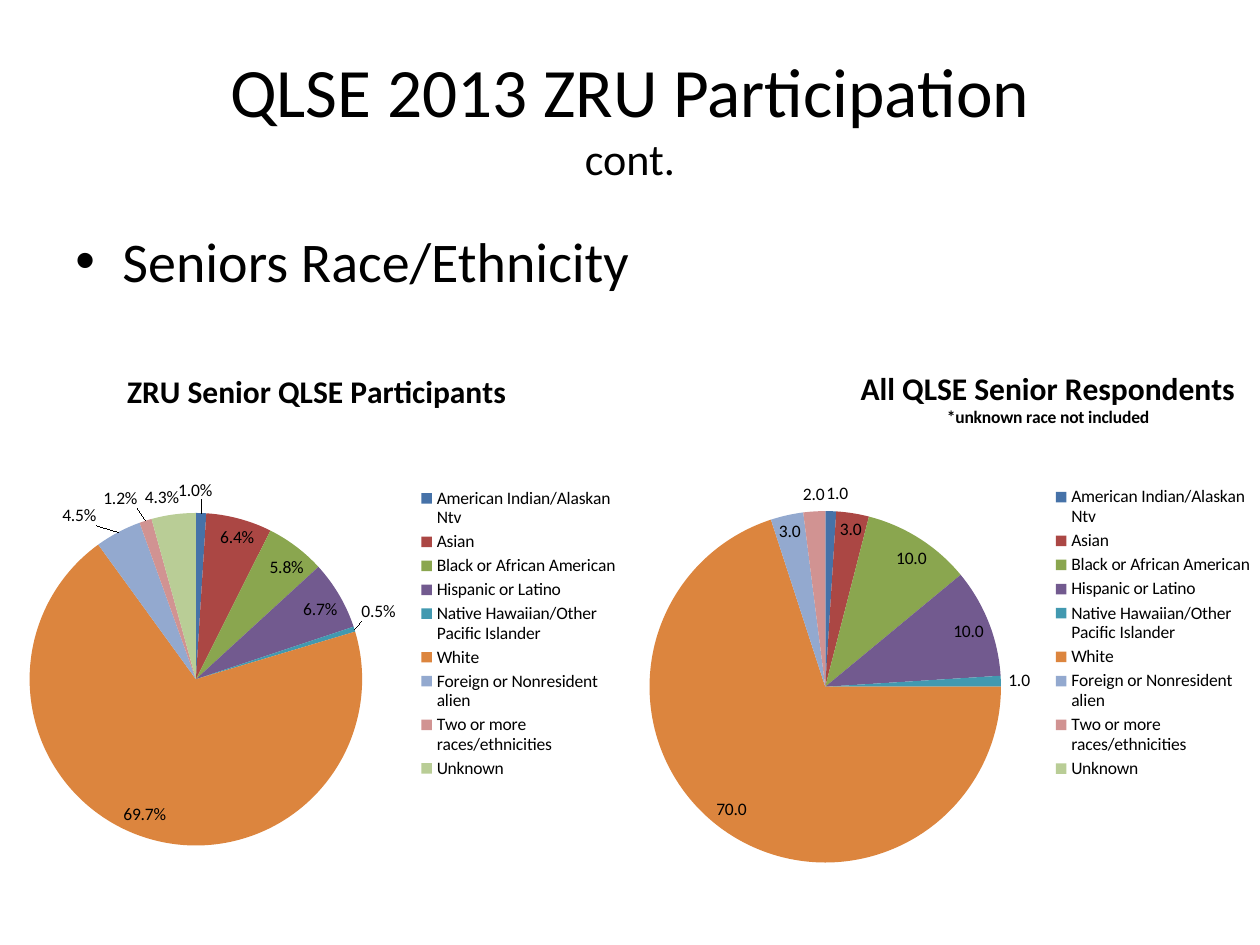
import pptx
import pptx.chart.data
import pptx.dml.color
import pptx.enum.chart
import pptx.enum.text
import pptx.oxml
import pptx.oxml.ns
import pptx.util
from pptx.util import Cm


def color(value):
    return pptx.dml.color.RGBColor.from_string(value)


def place(chart, anchor, values, inner=False):
    for layout in anchor.getparent().findall(pptx.oxml.ns.qn("c:layout")):
        anchor.getparent().remove(layout)
    target = '<c:layoutTarget val="inner"/>' if inner else ""
    modes = '<c:xMode val="edge"/><c:yMode val="edge"/>' if chart else ""
    sizes = "".join(f'<c:{name} val="{value}"/>' for name, value in zip("xywh", values))
    layout = pptx.oxml.parse_xml(
        f'<c:layout {pptx.oxml.ns.nsdecls("c")}><c:manualLayout>{target}{modes}{sizes}'
        "</c:manualLayout></c:layout>"
    )
    if inner:
        anchor.addprevious(layout)
    else:
        anchor.addnext(layout)


presentation = pptx.Presentation()
presentation.slide_width = Cm(25.4)
presentation.slide_height = Cm(19.05)
slide = presentation.slides.add_slide(presentation.slide_layouts[6])

texts = [
    {
        "box": (1.27, 0.76, 22.86, 3.18),
        "lines": [("QLSE 2013 ZRU Participation", 39.6), ("cont.", 25.2)],
        "anchor": pptx.enum.text.MSO_ANCHOR.MIDDLE,
        "alignment": pptx.enum.text.PP_ALIGN.CENTER,
        "bullet": False,
    },
    {
        "box": (1.27, 4.45, 22.86, 12.57),
        "lines": [("Seniors Race/Ethnicity", 32)],
        "anchor": pptx.enum.text.MSO_ANCHOR.TOP,
        "alignment": pptx.enum.text.PP_ALIGN.LEFT,
        "bullet": True,
    },
]
for text in texts:
    shape = slide.shapes.add_textbox(*map(Cm, text["box"]))
    frame = shape.text_frame
    frame.word_wrap = True
    frame.vertical_anchor = text["anchor"]
    paragraph = frame.paragraphs[0]
    paragraph.alignment = text["alignment"]
    for index, (line, size) in enumerate(text["lines"]):
        if index:
            paragraph.add_line_break()
        run = paragraph.add_run()
        run.text = line
        run.font.color.rgb = color("000000")
        for name, value in {"name": "Calibri", "size": pptx.util.Pt(size)}.items():
            setattr(run.font, name, value)
    if text["bullet"]:
        properties = paragraph._p.get_or_add_pPr()
        properties.set("marL", str(Cm(0.95)))
        properties.set("indent", str(Cm(-0.95)))
        namespace = pptx.oxml.ns.nsdecls("a")
        properties.append(pptx.oxml.parse_xml(f'<a:buFont {namespace} typeface="Arial"/>'))
        properties.append(pptx.oxml.parse_xml(f'<a:buChar {namespace} char="•"/>'))

categories = [
    "American Indian/Alaskan Ntv",
    "Asian",
    "Black or African American",
    "Hispanic or Latino",
    "Native Hawaiian/Other Pacific Islander",
    "White",
    "Foreign or Nonresident alien",
    "Two or more races/ethnicities",
    "Unknown",
]
slice_colors = [
    "4672A8", "AB4744", "8AA64F", "725A8F", "4299B0",
    "DC853E", "93A9CF", "D19392", "B9CD96",
]
pies = [
    {
        "box": (0.2, 6.99, 12.5, 11.56),
        "title": [("ZRU Senior QLSE Participants", 18)],
        "values": [0.01, 0.064, 0.058, 0.067, 0.005, 0.697, 0.045, 0.012, 0.043],
        "format": "0.0%",
        "title_at": (0.18, 0.03),
        "plot_at": (0.03, 0.29, 0.54, 0.58),
        "legend_at": (0.65, 0.24, 0.34, 0.52),
        "outside": {
            0: (-0.01, -0.01), 4: (0, -0.01), 6: (-0.03, 0),
            7: (-0.01, -0.01), 8: (0.01, 0),
        },
    },
    {
        "box": (12.7, 6.99, 12.7, 11.43),
        "title": [("All QLSE Senior Respondents", 18), ("*unknown race not included", 10)],
        "values": [1, 3, 10, 10, 1, 70, 3, 2, 0],
        "format": "###0.0",
        "title_at": (0.36, 0.03),
        "plot_at": (0.03, 0.29, 0.56, 0.62),
        "legend_at": (0.67, 0.24, 0.32, 0.53),
        "outside": {0: (0.01, 0), 4: None, 7: None},
    },
]
position = pptx.enum.chart.XL_LABEL_POSITION
for pie in pies:
    data = pptx.chart.data.CategoryChartData(number_format=pie["format"])
    data.categories = categories
    data.add_series("Series 1", pie["values"])
    chart = slide.shapes.add_chart(
        pptx.enum.chart.XL_CHART_TYPE.PIE, *map(Cm, pie["box"]), data
    ).chart
    chart.font.color.rgb = color("000000")
    for name, value in {"name": "Calibri", "size": pptx.util.Pt(10)}.items():
        setattr(chart.font, name, value)

    frame = chart.chart_title.text_frame
    for index, (line, size) in enumerate(pie["title"]):
        paragraph = frame.add_paragraph() if index else frame.paragraphs[0]
        paragraph.alignment = pptx.enum.text.PP_ALIGN.CENTER
        run = paragraph.add_run()
        run.text = line
        run.font.color.rgb = color("000000")
        title_font = {"name": "Calibri", "size": pptx.util.Pt(size), "bold": True}
        for name, value in title_font.items():
            setattr(run.font, name, value)

    chart.has_legend = True
    chart.legend.position = pptx.enum.chart.XL_LEGEND_POSITION.RIGHT
    chart.legend.include_in_layout = False

    plot = chart.plots[0]
    plot.vary_by_categories = True
    series = plot.series[0]
    labels = {
        "show_value": True,
        "number_format": pie["format"],
        "number_format_is_linked": False,
        "position": position.BEST_FIT,
    }
    for name, value in labels.items():
        setattr(series.data_labels, name, value)
    for index, slice_color in enumerate(slice_colors):
        point = series.points[index]
        point.format.fill.solid()
        point.format.fill.fore_color.rgb = color(slice_color)
        if index in pie["outside"]:
            point.data_label.position = position.OUTSIDE_END
        if pie["values"][index] == 0:
            point.data_label.position = position.OUTSIDE_END
            label = chart.element.xpath(f".//c:dLbl[c:idx/@val='{index}']")[0]
            for child in list(label)[1:]:
                label.remove(child)
            label.append(pptx.oxml.parse_xml(
                f'<c:delete {pptx.oxml.ns.nsdecls("c")} val="1"/>'
            ))

    for index, offset in pie["outside"].items():
        if offset:
            place(None, chart.element.xpath(f".//c:dLbl/c:idx[@val='{index}']")[0], offset)
    place(chart, chart.element.xpath(".//c:title/c:tx")[0], pie["title_at"])
    place(chart, chart.element.xpath(".//c:legendPos")[0], pie["legend_at"])
    place(chart, chart.element.xpath(".//c:pieChart")[0], pie["plot_at"], inner=True)

presentation.save("out.pptx")
